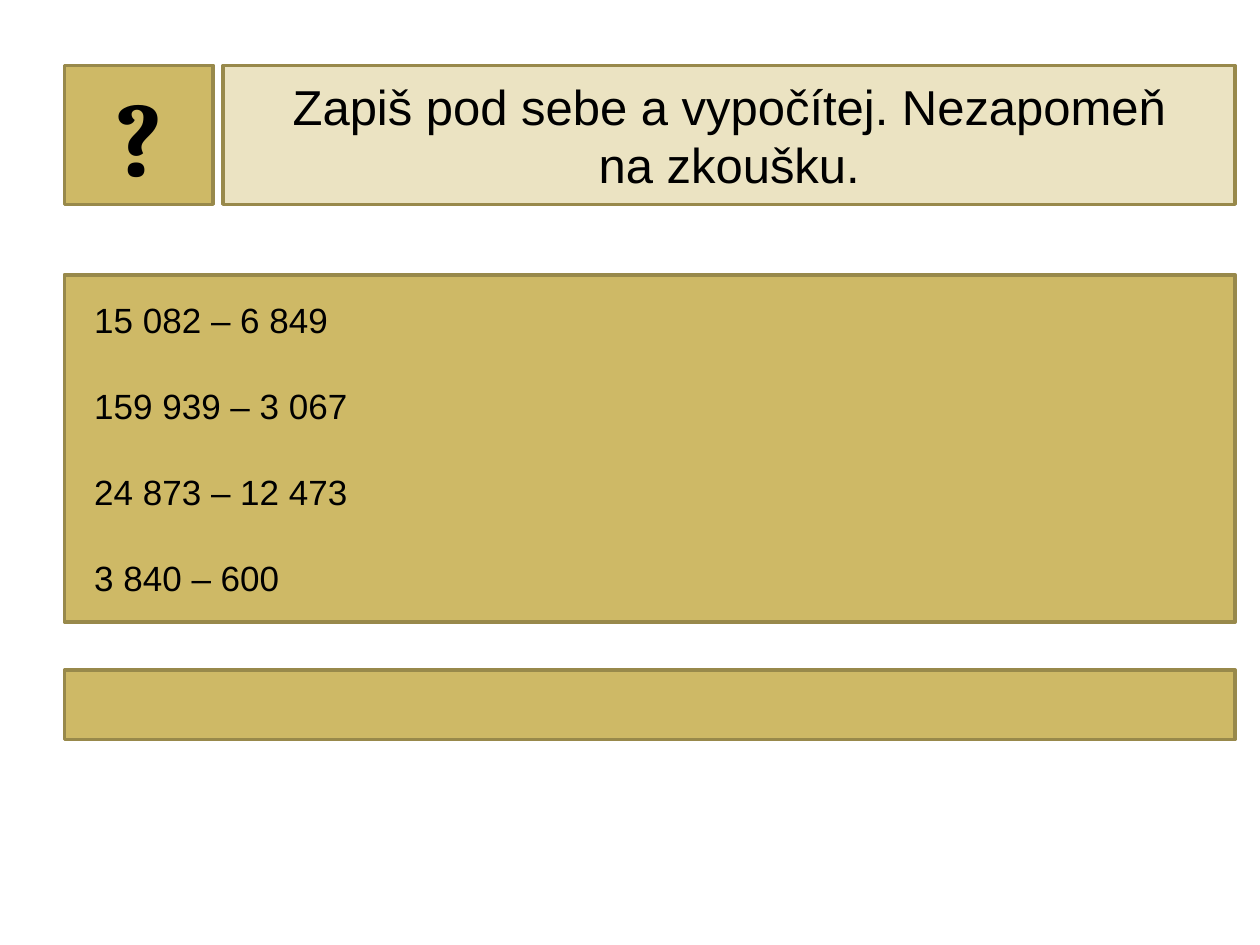
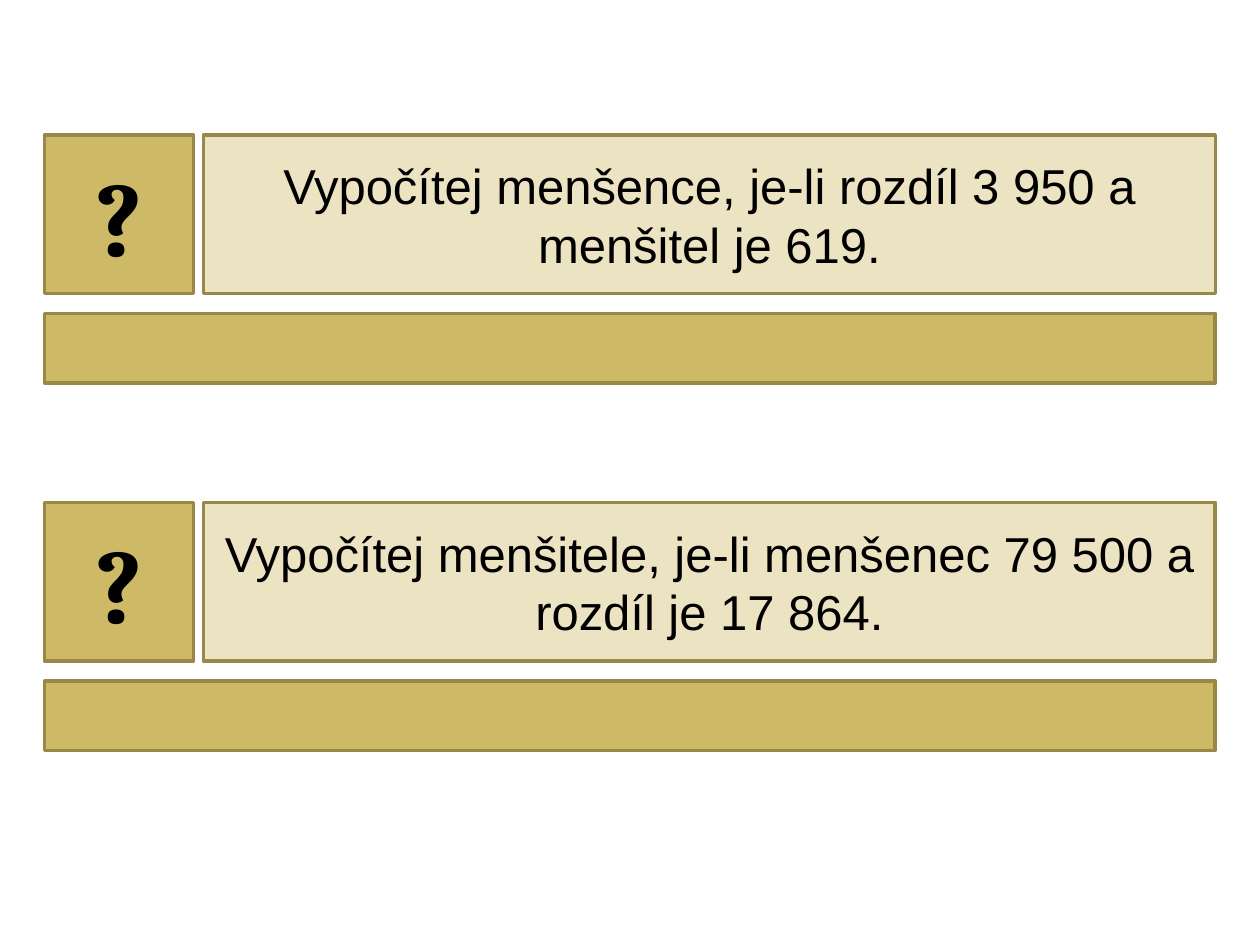
from dataclasses import dataclass

from pptx import Presentation
from pptx.dml.color import RGBColor
from pptx.enum.shapes import MSO_SHAPE as Shape
from pptx.enum.text import MSO_ANCHOR as Anchor, MSO_AUTO_SIZE as AutoSize, PP_ALIGN as Align
from pptx.util import Cm, Pt


@dataclass(frozen=True)
class Theme:
    gold: RGBColor = RGBColor(0xCE, 0xB9, 0x66)
    cream: RGBColor = RGBColor(0xEB, 0xE3, 0xC2)
    edge: RGBColor = RGBColor(0x98, 0x89, 0x4B)
    ink: RGBColor = RGBColor(0, 0, 0)
    edge_width: Pt = Pt(2)
    body_font: str = "Arial"
    mark_font: str = "Cambria"
    mark_size: Pt = Pt(60)
    task_size: Pt = Pt(28)
    exercise_size: Pt = Pt(20)


theme = Theme()

FULL_WIDTH = 23.6
MARK_WIDTH = 3.0
MARK_GAP = 0.2
ANSWER_HEIGHT = 1.4


def panel(page, left, top, width, height, fill, lines=(), size=theme.task_size,
          font=theme.body_font, bold=False, align=Align.CENTER, title=False):
    """Draw a bordered box with one paragraph per line; a title uses the placeholder."""
    bounds = Cm(left), Cm(top), Cm(width), Cm(height)
    if title:
        box = page.shapes.title
        box.left, box.top, box.width, box.height = bounds
    else:
        box = page.shapes.add_shape(Shape.RECTANGLE, *bounds)
        box.shadow.inherit = False
    box.fill.solid()
    box.fill.fore_color.rgb = fill
    box.line.color.rgb = theme.edge
    box.line.width = theme.edge_width

    frame = box.text_frame
    frame.word_wrap = True
    frame.auto_size = AutoSize.NONE
    frame.vertical_anchor = Anchor.MIDDLE
    frame.text = "\n".join(lines)
    for para in frame.paragraphs:
        para.alignment = align
        para.font.name = font
        para.font.size = size
        para.font.bold = bold
        para.font.color.rgb = theme.ink
    return box


def task(page, left, top, height, lines, title=False):
    """Draw a question mark tile with the task wording beside it."""
    panel(page, left, top, MARK_WIDTH, height, theme.gold, ["?"],
          theme.mark_size, theme.mark_font, bold=True)
    offset = MARK_WIDTH + MARK_GAP
    panel(page, left + offset, top, FULL_WIDTH - offset, height, theme.cream,
          lines, title=title)


deck = Presentation()
deck.slide_width, deck.slide_height = Cm(25.4), Cm(19.05)
title_only = deck.slide_layouts[5]

# Written subtraction
page = deck.slides.add_slide(title_only)
left = 1.3
task(page, left, 1.32, 2.8,
     ["Zapiš pod sebe a vypočítej. Nezapomeň", "na zkoušku."], title=True)
exercises = panel(page, left, 5.54, FULL_WIDTH, 7.0, theme.gold,
                  ["15 082 – 6 849", "159 939 – 3 067", "24 873 – 12 473", "3 840 – 600"],
                  theme.exercise_size, align=Align.LEFT)
exercises.text_frame.margin_left = Cm(0.6)
for para in exercises.text_frame.paragraphs[1:]:
    para.space_before = Pt(25)
panel(page, left, 13.51, FULL_WIDTH, ANSWER_HEIGHT, theme.gold)

# Finding the minuend and the subtrahend
page = deck.slides.add_slide(title_only)
left, task_height, answer_gap = 0.9, 3.2, 0.4
questions = [
    (2.72, "Vypočítej menšence, je-li rozdíl 3 950 a menšitel je 619."),
    (10.13, "Vypočítej menšitele, je-li menšenec 79 500 a rozdíl je 17 864."),
]
for number, (top, wording) in enumerate(questions):
    task(page, left, top, task_height, [wording], title=number == 0)
    panel(page, left, top + task_height + answer_gap, FULL_WIDTH, ANSWER_HEIGHT, theme.gold)

deck.save("out.pptx")
